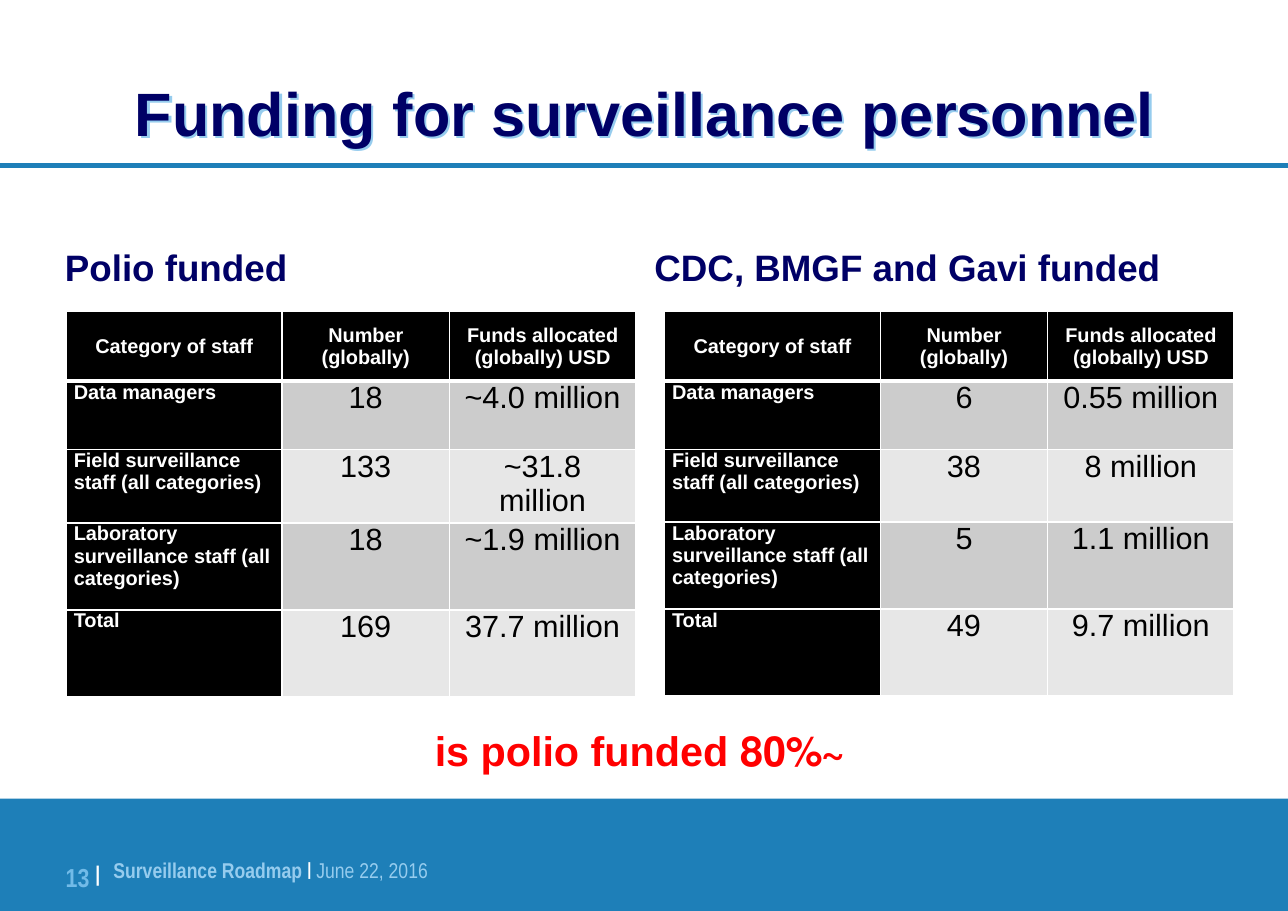
from dataclasses import dataclass
from typing import Optional

from lxml.etree import SubElement
from pptx import Presentation
from pptx.dml.color import RGBColor
from pptx.enum.shapes import MSO_CONNECTOR as Connector, MSO_SHAPE as Shape
from pptx.enum.text import MSO_ANCHOR as Anchor, PP_ALIGN as Align
from pptx.oxml.ns import qn
from pptx.util import Inches, Pt

NAVY = RGBColor(0x00, 0x00, 0x66)
BLUE = RGBColor(0x1E, 0x7F, 0xB8)
PALE_BLUE = RGBColor(0x96, 0xCC, 0xEE)
SKY_BLUE = RGBColor(0x72, 0xBB, 0xE8)
WHITE = RGBColor(0xFF, 0xFF, 0xFF)
BLACK = RGBColor(0x00, 0x00, 0x00)
RED = RGBColor(0xFF, 0x00, 0x00)
DARK_BAND = RGBColor(0xCC, 0xCC, 0xCC)
LIGHT_BAND = RGBColor(0xE7, 0xE7, 0xE7)

SLIDE_WIDTH, SLIDE_HEIGHT = 11.69, 8.27
COLUMN_WIDTHS = (1.96, 1.52, 1.69)
ROW_HEIGHTS = (0.63, 0.62, 0.66, 0.79, 0.79)
HEADERS = ("Category of staff", "Number (globally)", "Funds allocated (globally) USD")
STAFF = (
    "Data managers",
    "Field surveillance staff (all categories)",
    "Laboratory surveillance staff (all categories)",
    "Total",
)


@dataclass
class Run:
    text: str
    size: float
    color: RGBColor
    bold: bool = False
    font: str = "Arial"
    baseline: Optional[int] = None


@dataclass
class Funding:
    heading: str
    heading_left: float
    table_left: float
    numbers: tuple[str, ...]
    funds: tuple[str, ...]


FUNDINGS = (
    Funding("Polio funded", 0.59, 0.6, ("18", "133", "18", "169"),
            ("~4.0 million", "~31.8 million", "~1.9 million", "37.7 million")),
    Funding("CDC, BMGF and Gavi funded", 5.94, 6.03, ("6", "38", "5", "49"),
            ("0.55 million", "8 million", "1.1 million", "9.7 million")),
)


def write_text(frame, *runs: Run, align=Align.LEFT, right_to_left: bool = False) -> None:
    paragraph = frame.paragraphs[0]
    paragraph.alignment = align
    if right_to_left:
        paragraph._p.get_or_add_pPr().set("rtl", "1")
    for item in runs:
        run = paragraph.add_run()
        run.text = item.text
        run.font.size = Pt(item.size)
        run.font.name = item.font
        run.font.bold = item.bold
        run.font.color.rgb = item.color
        if item.baseline is not None:
            run._r.get_or_add_rPr().set("baseline", str(item.baseline * 1000))


def format_frame(frame, anchor, horizontal: float = 0, vertical: float = 0) -> None:
    frame.word_wrap = True
    frame.vertical_anchor = anchor
    frame.margin_left = frame.margin_right = Inches(horizontal)
    frame.margin_top = frame.margin_bottom = Inches(vertical)


def add_text(slide, left: float, top: float, width: float, height: float, *runs: Run,
             anchor=Anchor.TOP, horizontal: float = 0, vertical: float = 0, **paragraph_format) -> None:
    box = slide.shapes.add_textbox(Inches(left), Inches(top), Inches(width), Inches(height))
    format_frame(box.text_frame, anchor, horizontal, vertical)
    write_text(box.text_frame, *runs, **paragraph_format)


def set_borders(cell, bottom: float) -> None:
    properties = cell._tc.get_or_add_tcPr()
    widths = {"a:lnL": 1, "a:lnR": 1, "a:lnT": 1, "a:lnB": bottom}
    for position, (tag, width) in enumerate(widths.items()):
        line = SubElement(properties, qn(tag), w=str(Pt(width)))
        fill = SubElement(line, qn("a:solidFill"))
        SubElement(fill, qn("a:srgbClr"), val=str(WHITE))
        properties.insert(position, line)


def add_staff_table(slide, funding: Funding) -> None:
    rows = (HEADERS, *zip(STAFF, funding.numbers, funding.funds))
    table = slide.shapes.add_table(
        len(rows), len(HEADERS), Inches(funding.table_left), Inches(2.83),
        Inches(sum(COLUMN_WIDTHS)), Inches(sum(ROW_HEIGHTS))).table
    table.horz_banding = False
    for column, width in zip(table.columns, COLUMN_WIDTHS):
        column.width = Inches(width)
    for row, height in zip(table.rows, ROW_HEIGHTS):
        row.height = Inches(height)
    for row_index, texts in enumerate(rows):
        is_header = row_index == 0
        for column_index, text in enumerate(texts):
            is_label = is_header or column_index == 0
            band = DARK_BAND if row_index % 2 else LIGHT_BAND
            cell = table.cell(row_index, column_index)
            cell.fill.solid()
            cell.fill.fore_color.rgb = BLACK if is_label else band
            cell.vertical_anchor = Anchor.MIDDLE if is_header else Anchor.TOP
            cell.margin_left = cell.margin_right = Inches(0.07)
            cell.margin_top = cell.margin_bottom = 0
            label = Run(text, 13, WHITE, bold=True) if is_label else Run(text, 20, BLACK)
            write_text(cell.text_frame, label,
                       align=Align.CENTER if is_header or column_index else Align.LEFT)
            set_borders(cell, bottom=3 if is_header else 1)


def add_title(slide) -> None:
    title = slide.shapes.title
    title.left, title.top = Inches(0.59), Inches(0.33)
    title.width, title.height = Inches(10.52), Inches(1.38)
    format_frame(title.text_frame, Anchor.MIDDLE)
    write_text(title.text_frame, Run("Funding for surveillance personnel", 40, NAVY, bold=True),
               align=Align.CENTER)
    effects = SubElement(title._element.spPr, qn("a:effectLst"))
    shadow = SubElement(effects, qn("a:outerShdw"), dist=str(Pt(2)), dir="2700000")
    SubElement(shadow, qn("a:srgbClr"), val=str(PALE_BLUE))


def add_frame(slide) -> None:
    """Draw the rule under the title and the footer band."""
    rule = slide.shapes.add_connector(
        Connector.STRAIGHT, 0, Inches(1.5), Inches(SLIDE_WIDTH), Inches(1.5))
    rule.line.color.rgb = BLUE
    rule.line.width = Pt(3)
    SubElement(rule._element.spPr, qn("a:effectLst"))

    band = slide.shapes.add_shape(
        Shape.RECTANGLE, 0, Inches(7.25), Inches(SLIDE_WIDTH), Inches(1.02))
    band.shadow.inherit = False
    band.fill.solid()
    band.fill.fore_color.rgb = BLUE
    band.line.fill.background()

    narrow = "Arial Narrow"
    add_text(slide, 1.03, 7.7, 5.43, 0.52,
             Run("Surveillance Roadmap ", 14, PALE_BLUE, True, narrow),
             Run("|", 20, WHITE, True, narrow, baseline=12),
             Run(" ", 14, PALE_BLUE, True, narrow),
             Run("June 22, 2016", 14, PALE_BLUE, False, narrow))
    add_text(slide, 0.46, 7.72, 0.45, 0.4,
             Run("13 ", 17, SKY_BLUE, True, narrow),
             Run("|", 24, WHITE, True, narrow, baseline=14), align=Align.RIGHT)


def main() -> None:
    presentation = Presentation()
    presentation.slide_width = Inches(SLIDE_WIDTH)
    presentation.slide_height = Inches(SLIDE_HEIGHT)
    slide = presentation.slides.add_slide(presentation.slide_layouts[5])

    add_frame(slide)
    add_title(slide)
    for funding in FUNDINGS:
        add_text(slide, funding.heading_left, 1.85, 5.17, 0.77,
                 Run(funding.heading, 24, NAVY, bold=True), anchor=Anchor.BOTTOM)
        add_staff_table(slide, funding)
    add_text(slide, 2.44, 6.52, 6.72, 0.57, Run("~80% is polio funded", 27, RED, bold=True),
             horizontal=0.11, vertical=0.06, align=Align.CENTER, right_to_left=True)

    presentation.save("out.pptx")


if __name__ == "__main__":
    main()
